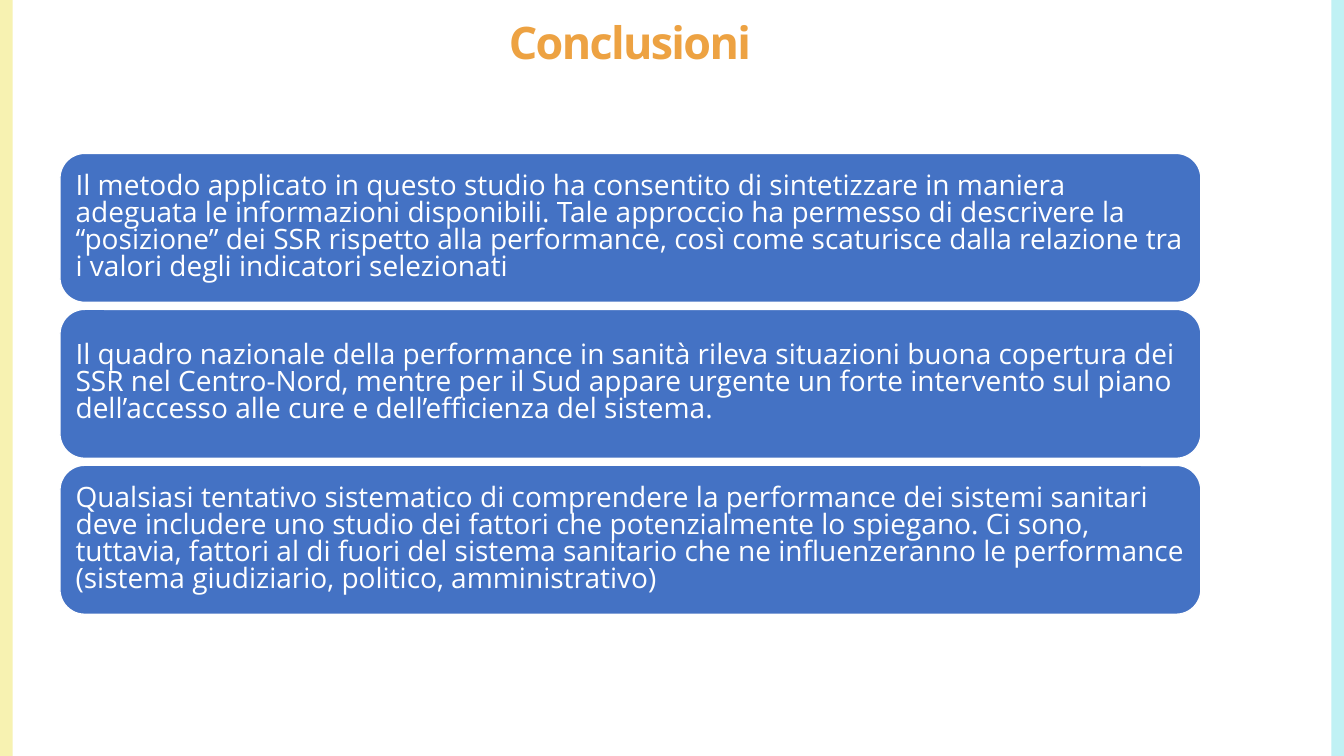
from pptx import Presentation
from pptx.dml.color import RGBColor
from pptx.enum.shapes import MSO_SHAPE
from pptx.enum.text import MSO_ANCHOR, PP_ALIGN
from pptx.util import Pt

RECTANGLE = MSO_SHAPE.RECTANGLE
ROUNDED = MSO_SHAPE.ROUNDED_RECTANGLE
MIDDLE = MSO_ANCHOR.MIDDLE
CENTER = PP_ALIGN.CENTER
LEFT = PP_ALIGN.LEFT

CONCLUSIONS = [
    "Il metodo applicato in questo studio ha consentito di sintetizzare in maniera "
    "adeguata le informazioni disponibili. Tale approccio ha permesso di descrivere la "
    "“posizione” dei SSR rispetto alla performance, così come scaturisce dalla relazione "
    "tra i valori degli indicatori selezionati",
    "Il quadro nazionale della performance in sanità rileva situazioni buona copertura dei "
    "SSR nel Centro-Nord, mentre per il Sud appare urgente un forte intervento sul piano "
    "dell’accesso alle cure e dell’efficienza del sistema.",
    "Qualsiasi tentativo sistematico di comprendere la performance dei sistemi sanitari "
    "deve includere uno studio dei fattori che potenzialmente lo spiegano. Ci sono, "
    "tuttavia, fattori al di fuori del sistema sanitario che ne influenzeranno le "
    "performance (sistema giudiziario, politico, amministrativo)",
]


def color(value):
    return RGBColor.from_string(value)


def write(shape, text, font_color, frame_format, paragraph_format, font_format):
    frame = shape.text_frame
    paragraph = frame.paragraphs[0]
    run = paragraph.add_run()
    run.text = text
    run.font.color.rgb = color(font_color)
    for target, values in (
        (frame, frame_format),
        (paragraph, paragraph_format),
        (run.font, font_format),
    ):
        for name, value in values.items():
            setattr(target, name, value)
    return run


presentation = Presentation()
presentation.slide_width = Pt(960)
presentation.slide_height = Pt(540)
slide = presentation.slides.add_slide(presentation.slide_layouts[6])

for left, fill in ((0, "F7F2B1"), (951, "C0F1F4")):
    band = slide.shapes.add_shape(RECTANGLE, Pt(left), 0, Pt(9), Pt(540))
    band.shadow.inherit = False
    band.fill.solid()
    band.fill.fore_color.rgb = color(fill)
    band.line.fill.background()

title = slide.shapes.add_textbox(Pt(25.2), Pt(4.3), Pt(849.6), Pt(55.4))
title_run = write(
    title, "Conclusioni", "EDA242",
    {"word_wrap": True, "vertical_anchor": MIDDLE},
    {"alignment": CENTER, "line_spacing": 0.9},
    {"name": "Open Sans", "size": Pt(32), "bold": True},
)
title_run.font._element.set("spc", "-120")

for index, conclusion in enumerate(CONCLUSIONS):
    card = slide.shapes.add_shape(
        ROUNDED, Pt(42.8), Pt(109.6 + 111.4 * index), Pt(815), Pt(106.4)
    )
    card.shadow.inherit = False
    card.fill.solid()
    card.fill.fore_color.rgb = color("4472C4")
    card.line.color.rgb = color("FFFFFF")
    card.line.width = Pt(1)
    write(
        card, conclusion, "FFFFFF",
        {"word_wrap": True, "vertical_anchor": MIDDLE, "margin_left": Pt(6),
         "margin_right": Pt(3), "margin_top": Pt(6), "margin_bottom": Pt(6)},
        {"alignment": LEFT, "line_spacing": 0.8},
        {"name": "Open Sans", "size": Pt(20)},
    )

presentation.save("out.pptx")
